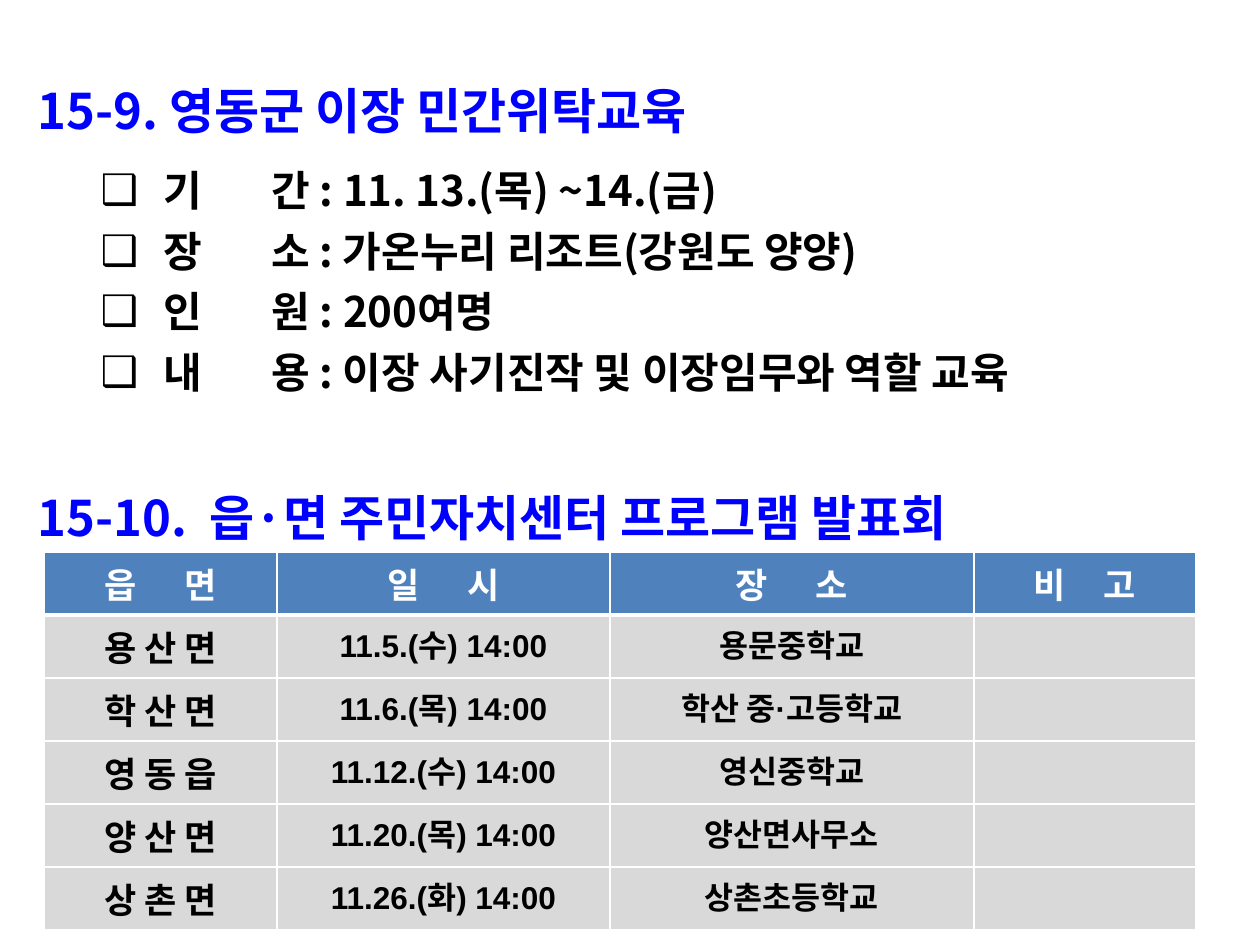
import pptx
import pptx.util
import pptx.dml.color
import pptx.enum.text
import pptx.oxml

Inches = pptx.util.Inches
Pt = pptx.util.Pt
new_element = pptx.oxml.xmlchemy.OxmlElement


def colour(value):
    return pptx.dml.color.RGBColor.from_string(value)


def add_child(parent, tag, **attributes):
    child = new_element(tag)
    for name, value in attributes.items():
        child.set(name, str(value))
    parent.append(child)
    return child


class SlideWriter:
    heading_font = "Noto Sans CJK KR"
    table_font = "Arial"
    blue, black, white = "0000FF", "000000", "FFFFFF"
    header_fill, body_fill = "4F81BD", "D9D9D9"
    space_width = 0.285

    def __init__(self, slide):
        self.slide = slide

    def run(self, paragraph, text, size, font, ink):
        piece = paragraph.add_run()
        piece.text = text
        piece.font.size = Pt(size)
        piece.font.bold = True
        piece.font.name = font
        piece.font.color.rgb = colour(ink)
        properties = piece.font._element
        add_child(properties, "a:ea", typeface=self.heading_font)
        return properties

    def spread(self, paragraph, first, last, spaces, size, font, ink):
        self.run(paragraph, first, size, font, ink)
        gap = self.run(paragraph, " ", size, font, ink)
        gap.set("spc", str(round((spaces - 1) * self.space_width * size * 100)))
        self.run(paragraph, last, size, font, ink)

    def section(self, top, height, title, details=()):
        box = self.slide.shapes.add_textbox(
            Inches(0.2), Inches(top), Inches(9.49), Inches(height))
        frame = box.text_frame
        frame.word_wrap = True
        heading = frame.paragraphs[0]
        heading.line_spacing = 1.5
        self.run(heading, title, 28, self.heading_font, self.blue)
        for index, (first, last) in enumerate(details):
            detail = frame.add_paragraph()
            detail.level = 1
            detail.line_spacing = 1.2 if index else 1.5
            self.bullet(detail)
            self.spread(detail, first, last, 6, 24, self.heading_font, self.black)

    def bullet(self, paragraph):
        properties = paragraph._p.get_or_add_pPr()
        properties.set("marL", str(Inches(1)))
        properties.set("indent", str(-Inches(0.5)))
        ink = add_child(properties, "a:buClr")
        add_child(ink, "a:srgbClr", val=self.black)
        add_child(properties, "a:buFont", typeface=self.table_font)
        add_child(properties, "a:buChar", char="❑")

    def borders(self, cell, bottom):
        properties = cell._tc.get_or_add_tcPr()
        widths = {"a:lnL": 1, "a:lnR": 1, "a:lnT": 1, "a:lnB": bottom}
        for position, (tag, width) in enumerate(widths.items()):
            line = new_element(tag)
            line.set("w", str(Pt(width)))
            fill = add_child(line, "a:solidFill")
            add_child(fill, "a:srgbClr", val=self.white)
            properties.insert(position, line)

    def cell(self, cell, fill, bottom=1):
        cell.fill.solid()
        cell.fill.fore_color.rgb = colour(fill)
        self.borders(cell, bottom)
        paragraph = cell.text_frame.paragraphs[0]
        paragraph.alignment = pptx.enum.text.PP_ALIGN.CENTER
        return paragraph

    def schedule(self, headers, events):
        widths = [1.85, 2.64, 2.89, 1.76]
        row_height = 0.5
        row_count = len(events) + 1
        table = self.slide.shapes.add_table(
            row_count, len(widths), Inches(0.35), Inches(4.38),
            Inches(sum(widths)), Inches(row_height * row_count)).table
        for column, width in zip(table.columns, widths):
            column.width = Inches(width)
        for row in table.rows:
            row.height = Inches(row_height)
        for column, (first, last, spaces) in enumerate(headers):
            paragraph = self.cell(table.cell(0, column), self.header_fill, 3)
            self.spread(paragraph, first, last, spaces, 20, self.table_font, self.white)
        for row, event in enumerate(events, 1):
            for column, text in enumerate(event + ("",)):
                paragraph = self.cell(table.cell(row, column), self.body_fill)
                if text:
                    size = 18 if column else 20
                    self.run(paragraph, text, size, self.table_font, self.black)


def main():
    deck = pptx.Presentation()
    deck.slide_width = Inches(10)
    deck.slide_height = Inches(7.5)
    writer = SlideWriter(deck.slides.add_slide(deck.slide_layouts[6]))
    writer.section(0.36, 2.84, "15-9. 영동군 이장 민간위탁교육", [
        ("기", "간 : 11. 13.(목) ~14.(금)"),
        ("장", "소 : 가온누리 리조트(강원도 양양)"),
        ("인", "원 : 200여명"),
        ("내", "용 : 이장 사기진작 및 이장임무와 역할 교육"),
    ])
    writer.section(3.59, 3.31, "15-10.  읍·면 주민자치센터 프로그램 발표회")
    writer.schedule(
        [("읍", "면", 5), ("일", "시", 5), ("장", "소", 5), ("비", "고", 4)],
        [
            ("용 산 면", "11.5.(수) 14:00", "용문중학교"),
            ("학 산 면", "11.6.(목) 14:00", "학산 중·고등학교"),
            ("영 동 읍", "11.12.(수) 14:00", "영신중학교"),
            ("양 산 면", "11.20.(목) 14:00", "양산면사무소"),
            ("상 촌 면", "11.26.(화) 14:00", "상촌초등학교"),
        ])
    deck.save("out.pptx")


if __name__ == "__main__":
    main()
